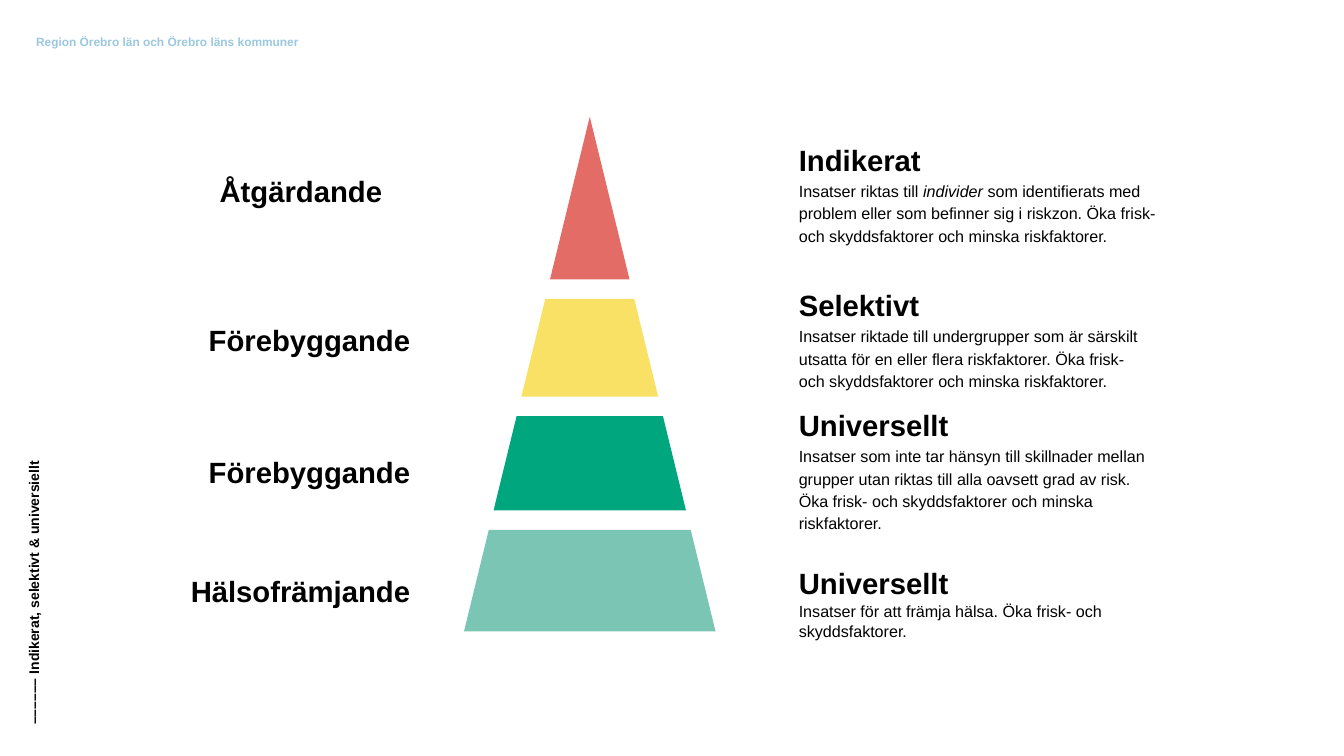
from dataclasses import dataclass

from pptx import Presentation
from pptx.dml.color import RGBColor
from pptx.enum.text import PP_ALIGN
from pptx.util import Inches, Pt


@dataclass(frozen=True)
class Theme:
    font: str = "Arial"
    black: str = "000000"
    header: str = "9BC8E0"
    red: str = "E36C66"
    yellow: str = "F8E164"
    green: str = "00A77E"
    mint: str = "7BC5B4"
    heading_size: float = 34.5
    body_size: float = 19
    side_size: float = 16.5
    header_size: float = 14


THEME = Theme()
HEADING = {"size": Pt(THEME.heading_size), "bold": True}
BODY = {"size": Pt(THEME.body_size)}

APEX_X, APEX_Y = 9.65, 1.91
SIDE_SLOPE = 0.65 / 2.66
BAND_GAP = 0.32
BANDS = [(2.66, THEME.red), (1.6, THEME.yellow), (1.54, THEME.green), (1.66, THEME.mint)]

# text, right edge, top
LABELS = [
    ("Åtgärdande", 6.25, 2.84),
    ("Förebyggande", 6.71, 5.27),
    ("Förebyggande", 6.71, 7.43),
    ("Hälsofrämjande", 6.71, 9.38),
]
LABEL_WIDTH = 4

DESCRIPTION_LEFT = 13.07
# heading, runs as (text, italic), top, width, height, line spacing
DESCRIPTIONS = [
    ("Indikerat",
     [("Insatser riktas till ", False), ("individer", True),
      (" som identifierats med problem eller som befinner sig i riskzon. "
       "Öka frisk- och skyddsfaktorer och minska riskfaktorer.", False)],
     2.32, 5.95, 1.65, 1.16),
    ("Selektivt",
     [("Insatser riktade till undergrupper som är särskilt utsatta för en eller flera "
       "riskfaktorer. Öka frisk- och skyddsfaktorer och minska riskfaktorer.", False)],
     4.7, 5.65, 1.65, 1.16),
    ("Universellt",
     [("Insatser som inte tar hänsyn till skillnader mellan grupper utan riktas till alla "
       "oavsett grad av risk. Öka frisk- och skyddsfaktorer och minska riskfaktorer.", False)],
     6.66, 5.8, 2, 1.16),
    ("Universellt",
     [("Insatser för att främja hälsa. Öka frisk- och skyddsfaktorer.", False)],
     9.25, 5.8, 1.2, 1.0),
]


def add_text_frame(s, left, top, width, height):
    """Add a wrapping text box without insets and return its text frame."""
    tf = s.shapes.add_textbox(Inches(left), Inches(top), Inches(width), Inches(height)).text_frame
    frame_format = {"word_wrap": True, "margin_left": 0, "margin_top": 0,
                    "margin_right": 0, "margin_bottom": 0}
    for name, value in frame_format.items():
        setattr(tf, name, value)
    return tf


def add_run(p, text, font_format, color=THEME.black):
    r = p.add_run()
    r.text = text
    for name, value in {"name": THEME.font, **font_format}.items():
        setattr(r.font, name, value)
    r.font.color.rgb = RGBColor.from_string(color)


def add_header(s):
    tf = add_text_frame(s, 0.59, 0.56, 7, 0.24)
    add_run(tf.paragraphs[0], "Region Örebro län och Örebro läns kommuner",
            {"size": Pt(THEME.header_size), "bold": True}, THEME.header)


def add_side_title(s):
    """Add the title that reads upwards along the left edge."""
    tf = add_text_frame(s, 0.42, 7.48, 0.28, 4.38)
    tf._txBody.bodyPr.set("vert", "vert270")
    p = tf.paragraphs[0]
    p.line_spacing = Pt(19.2)
    add_run(p, "–––––– Indikerat, selektivt & universiellt",
            {"size": Pt(THEME.side_size), "bold": True})


def add_label(s, text, right, top):
    p = add_text_frame(s, right - LABEL_WIDTH, top, LABEL_WIDTH, 0.56).paragraphs[0]
    p.alignment = PP_ALIGN.RIGHT
    add_run(p, text, HEADING)


def add_description(s, heading, runs, top, width, height, line_spacing):
    tf = add_text_frame(s, DESCRIPTION_LEFT, top, width, height)
    add_run(tf.paragraphs[0], heading, HEADING)
    p = tf.add_paragraph()
    p.space_before = Pt(1.6)
    p.line_spacing = line_spacing
    for text, italic in runs:
        add_run(p, text, {**BODY, "italic": italic})


def add_band(s, top, height, color):
    """Add the slice of the pyramid between top and top + height."""
    bottom = top + height
    half_top, half_bottom = ((y - APEX_Y) * SIDE_SLOPE for y in (top, bottom))
    corners = [(APEX_X - half_top, top), (APEX_X - half_bottom, bottom),
               (APEX_X + half_bottom, bottom)]
    if half_top:
        corners.append((APEX_X + half_top, top))
    start, *others = [(Inches(x), Inches(y)) for x, y in corners]
    builder = s.shapes.build_freeform(*start)
    builder.add_line_segments(others, close=True)
    sp = builder.convert_to_shape()
    sp.shadow.inherit = False
    sp.fill.solid()
    sp.fill.fore_color.rgb = RGBColor.from_string(color)
    sp.line.fill.background()


def add_pyramid(s):
    top = APEX_Y
    for height, color in BANDS:
        add_band(s, top, height, color)
        top += height + BAND_GAP


def main():
    prs = Presentation()
    prs.slide_width, prs.slide_height = Inches(21.99), Inches(12.37)
    s = prs.slides.add_slide(prs.slide_layouts[6])
    add_header(s)
    add_side_title(s)
    add_pyramid(s)
    for label in LABELS:
        add_label(s, *label)
    for description in DESCRIPTIONS:
        add_description(s, *description)
    prs.save("out.pptx")


if __name__ == "__main__":
    main()
